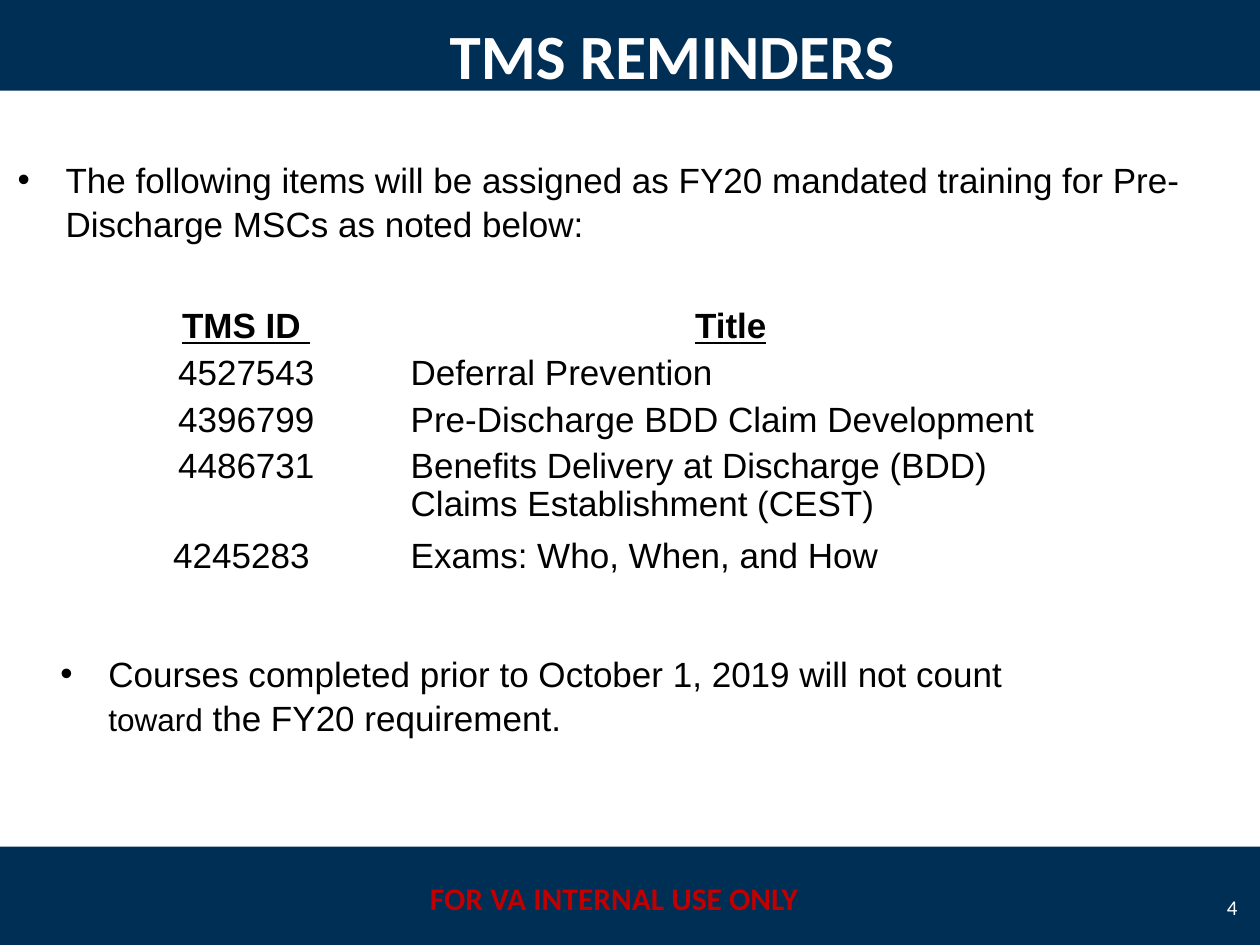
from dataclasses import dataclass

from pptx import Presentation
from pptx import util as u
from pptx.dml.color import RGBColor
from pptx.enum import shapes, text


@dataclass(frozen=True)
class Theme:
    """Colours, fonts and type sizes of the slide."""
    navy: str = "002F56"
    white: str = "FFFFFF"
    black: str = "000000"
    red: str = "C00000"
    heading_font: str = "Calibri"
    body_font: str = "Arial"
    title: int = 36
    body: int = 20
    small: int = 18
    number: int = 12


T = Theme()
COURSES = [
    ("TMS ID ", "Title"),
    ("4527543", "Deferral Prevention"),
    ("4396799", "Pre-Discharge BDD Claim Development"),
    ("4486731", "Benefits Delivery at Discharge (BDD) Claims Establishment (CEST)"),
    ("4245283 ", "Exams: Who, When, and How"),
]


def style(r, size, color, name, bold=False):
    """Set the font of a run."""
    f = r.font
    f.size, f.name, f.bold = u.Pt(size), name, bold
    f.color.rgb = RGBColor.from_string(color)


def place(sp, left, top, width, height):
    """Move and size a shape."""
    sp.left, sp.top = u.Inches(left), u.Inches(top)
    sp.width, sp.height = u.Inches(width), u.Inches(height)


def add_band(s, top):
    """Add a full-width navy band behind everything else."""
    sp = s.shapes.add_shape(shapes.MSO_SHAPE.RECTANGLE, 0, u.Inches(top),
                            u.Inches(10), u.Inches(0.8))
    sp.shadow.inherit = False
    sp.fill.solid()
    sp.fill.fore_color.rgb = RGBColor.from_string(T.navy)
    sp.line.fill.background()
    s.shapes._spTree.insert(2, sp._element)


def set_heading(sp, words, box, size, color, align, bold=True,
                anchor=text.MSO_ANCHOR.TOP):
    """Fill a title, footer or number box with one line."""
    place(sp, *box)
    tf = sp.text_frame
    tf.text = words
    tf.word_wrap = True
    tf.auto_size = text.MSO_AUTO_SIZE.NONE
    tf.vertical_anchor = anchor
    p = tf.paragraphs[0]
    p.alignment = align
    style(p.runs[0], size, color, T.heading_font, bold)


def set_bullet(sp, parts, box):
    """Fill a body placeholder with one bullet made of sized parts."""
    place(sp, *box)
    tf = sp.text_frame
    tf.auto_size = text.MSO_AUTO_SIZE.NONE
    p = tf.paragraphs[0]
    pPr = p._p.get_or_add_pPr()
    pPr.set("marL", str(u.Inches(0.38)))
    pPr.set("indent", str(u.Inches(-0.38)))
    p.space_before = u.Pt(0)
    p.line_spacing = 1.05
    for words, size in parts:
        r = p.add_run()
        r.text = words
        style(r, size, T.black, T.body_font)


def add_courses(s):
    """Add the table of course numbers and titles."""
    table = s.shapes.add_table(len(COURSES), 2, u.Inches(0.67), u.Inches(2.43),
                               u.Inches(7.92), u.Inches(2.21)).table
    table.first_row = table.horz_banding = False
    table.columns[0].width, table.columns[1].width = u.Inches(2.57), u.Inches(5.35)
    for i, course in enumerate(COURSES):
        table.rows[i].height = u.Inches(0.71 if len(course[1]) > 40 else 0.37)
        for j, words in enumerate(course):
            header = i == 0
            cell = table.cell(i, j)
            cell.fill.background()
            cell.margin_left = cell.margin_right = u.Inches(0.02)
            cell.margin_top = cell.margin_bottom = u.Inches(0.02)
            if header and j == 1:
                cell.margin_right = u.Inches(0.25)
            cell.text_frame.text = words
            p = cell.text_frame.paragraphs[0]
            p.line_spacing = 0.97
            centred = header or j == 0
            p.alignment = text.PP_ALIGN.CENTER if centred else text.PP_ALIGN.LEFT
            r = p.runs[0]
            style(r, T.body, T.black, T.body_font, header)
            r.font.underline = header


def main():
    """Build and save the slide."""
    prs = Presentation()
    prs.slide_width, prs.slide_height = u.Inches(10), u.Inches(7.5)
    s = prs.slides.add_slide(prs.slide_layouts[3])
    title, assigned, completed = s.placeholders
    center, right = text.PP_ALIGN.CENTER, text.PP_ALIGN.RIGHT

    for top in (-0.08, 6.72):
        add_band(s, top)
    set_heading(title, "TMS REMINDERS", (1.75, 0.08, 7.17, 0.71),
                T.title, T.white, center)
    set_bullet(assigned, [("The following items will be assigned as FY20 mandated "
                           "training for Pre-Discharge MSCs as noted below:", T.body)],
               (0.04, 1.19, 9.46, 0.77))
    add_courses(s)
    set_bullet(completed, [("Courses completed prior to October 1, 2019 will not count ",
                            T.body), ("toward", T.small),
                           (" the FY20 requirement.", T.body)],
               (0.38, 5.11, 8.5, 0.77))
    set_heading(s.shapes.add_textbox(0, 0, 0, 0), "FOR VA INTERNAL USE ONLY",
                (3.25, 6.93, 3.25, 0.4), T.small, T.red, center)
    set_heading(s.shapes.add_textbox(0, 0, 0, 0), "4", (9.5, 7, 0.42, 0.4),
                T.number, T.white, right, False, text.MSO_ANCHOR.MIDDLE)
    prs.save("out.pptx")


if __name__ == "__main__":
    main()
